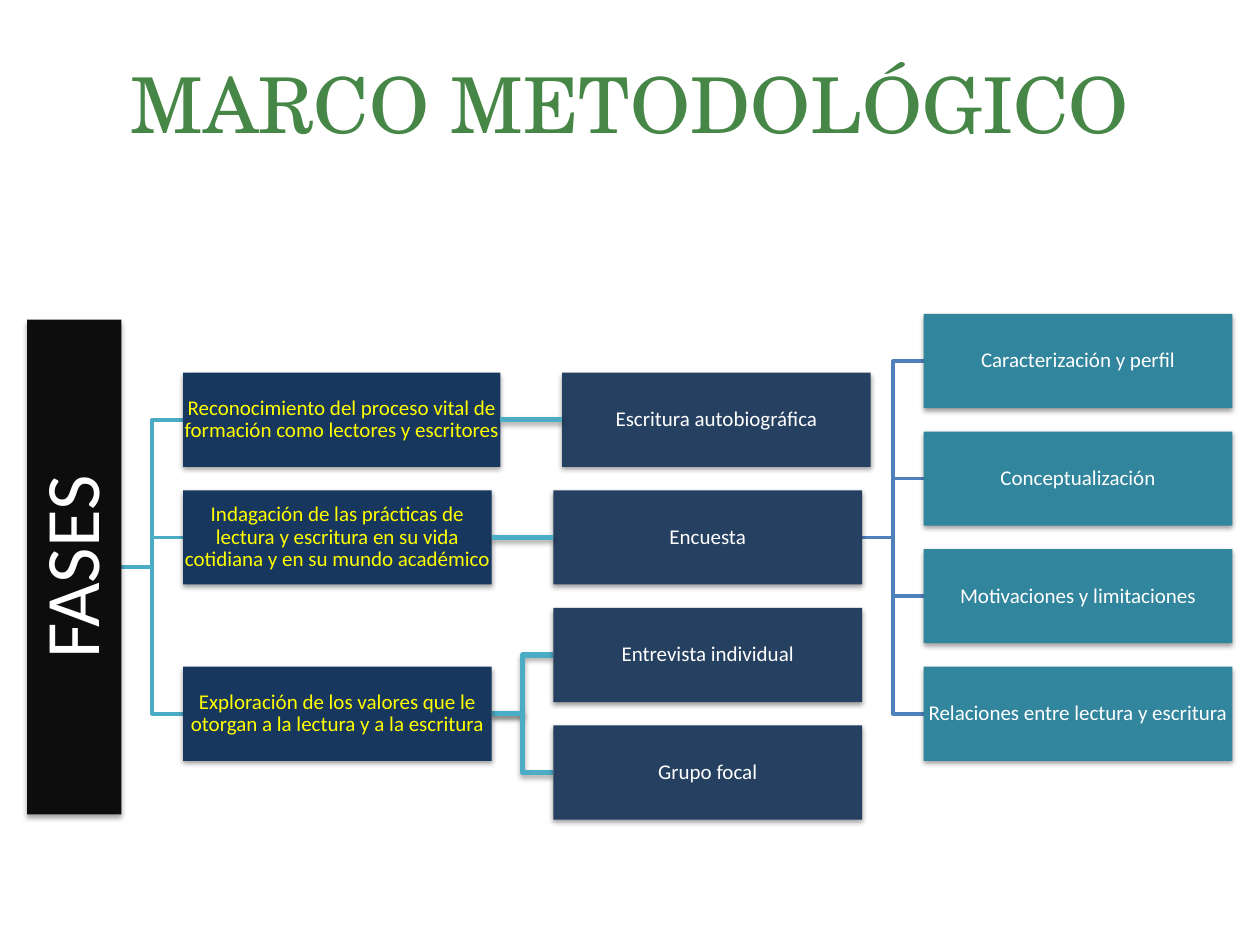
from lxml import etree
from pptx import Presentation
from pptx.dml.color import RGBColor
from pptx.enum import shapes as es, text as et
from pptx.oxml.ns import qn
from pptx.util import Pt

TITLE = "MARCO METODOLÓGICO"
ROOT = "FASES"
NAVY, SLATE, TEAL = "17375E", "254061", "31859C"
AQUA, BLUE, WHITE, YELLOW = "4BACC6", "4F81BD", "FFFFFF", "FFFF00"

# key: text, column, row, shift, extra width
BOXES = {
    "vital": ("Reconocimiento del proceso vital de formación como lectores y escritores", 0, 0.5, 0, 5),
    "habits": ("Indagación de las prácticas de lectura y escritura en su vida "
               "cotidiana y en su mundo académico", 0, 1.5, 0, 0),
    "values": ("Exploración de los valores que le otorgan a la lectura y a la escritura", 0, 3, 0, 0),
    "auto": ("Escritura autobiográfica", 1, 0.5, 5, 0),
    "survey": ("Encuesta", 1, 1.5, 0, 0),
    "talk": ("Entrevista individual", 1, 2.5, 0, 0),
    "group": ("Grupo focal", 1, 3.5, 0, 0),
    "profile": ("Caracterización y perfil", 2, 0, 0, 0),
    "concept": ("Conceptualización", 2, 1, 0, 0),
    "motive": ("Motivaciones y limitaciones", 2, 2, 0, 0),
    "relate": ("Relaciones entre lectura y escritura", 2, 3, 0, 0),
}
STYLES = [(NAVY, YELLOW), (SLATE, WHITE), (TEAL, WHITE)]
PAIRS = [("vital", "auto"), ("habits", "survey")]
FORKS = [
    ("root", ["vital", "habits", "values"], AQUA, 2, False),
    ("survey", ["profile", "concept", "motive", "relate"], BLUE, 2, False),
    ("values", ["talk", "group"], AQUA, 3, True),
]
LEFT, TOP, WIDE, HIGH = 104.6, 179.4, 176.4, 53.8
COL, ROW, GAP = 211.6, 67.2, 35.2
MID, LONG = 324, 282.8


def hue(code):
    return RGBColor.from_string(code)


def shade(props, alpha=38, dist=1.6):
    effect = props.find(qn("a:effectLst"))
    if effect is None:
        effect = etree.SubElement(props, qn("a:effectLst"))
    if alpha:
        cast = etree.SubElement(effect, qn("a:outerShdw"), blurRad=str(Pt(3.1)),
                                dist=str(Pt(dist)), dir="5400000", rotWithShape="0")
        tint = etree.SubElement(cast, qn("a:srgbClr"), val="000000")
        etree.SubElement(tint, qn("a:alpha"), val=str(alpha * 1000))


def write(shape, text, size=12, color=WHITE, font="Calibri", inset=0.75,
          anchor=et.MSO_ANCHOR.MIDDLE, space=0.9):
    frame = shape.text_frame
    frame.word_wrap = True
    frame.auto_size = et.MSO_AUTO_SIZE.NONE
    frame.vertical_anchor = anchor
    frame.margin_left = frame.margin_right = Pt(inset)
    frame.margin_top = frame.margin_bottom = Pt(inset)
    para = frame.paragraphs[0]
    para.alignment = et.PP_ALIGN.CENTER
    para.line_spacing = space
    run = para.add_run()
    run.text = text
    run.font.size = Pt(size)
    run.font.name = font
    run.font.color.rgb = hue(color)


def block(slide, x, y, w, h, fill, alpha=38, dist=1.6):
    shape = slide.shapes.add_shape(es.MSO_SHAPE.RECTANGLE, Pt(x), Pt(y), Pt(w), Pt(h))
    shape.fill.solid()
    shape.fill.fore_color.rgb = hue(fill)
    shape.line.fill.background()
    shape.shadow.inherit = False
    shade(shape._element.spPr, alpha, dist)
    return shape


def elbow(slide, start, end, color, width, soft):
    (x1, y1), (x2, y2) = start, end
    bend = (x1 + x2) / 2
    spots = [(bend, y1), (bend, y2), (x2, y2)]
    path = slide.shapes.build_freeform(Pt(x1), Pt(y1))
    path.add_line_segments([(Pt(x), Pt(y)) for x, y in spots], close=False)
    shape = path.convert_to_shape()
    shape.fill.background()
    shape.line.color.rgb = hue(color)
    shape.line.width = Pt(width)
    shape.shadow.inherit = False
    if soft:
        shade(shape._element.spPr, 35, 1.8)


def join(slide, first, last):
    line = slide.shapes.add_connector(es.MSO_CONNECTOR.STRAIGHT, 0, 0, 0, 0)
    line.begin_connect(first, 3)
    line.end_connect(last, 1)
    line.line.color.rgb = hue(AQUA)
    line.line.width = Pt(3)
    shade(line._element.spPr, 35, 1.8)


def main():
    deck = Presentation()
    deck.slide_width, deck.slide_height = Pt(720), Pt(540)
    slide = deck.slides.add_slide(deck.slide_layouts[5])

    title = slide.shapes.title
    title.left, title.top, title.width, title.height = Pt(49.7), Pt(28.8), Pt(620.6), Pt(104.4)
    write(title, TITLE, size=44, color="468646", font="TeX Gyre Schola",
          inset=3.6, anchor=et.MSO_ANCHOR.TOP, space=1)

    spots = {key: (LEFT + COL * col + shift, TOP + ROW * row, WIDE + extra)
             for key, (_, col, row, shift, extra) in BOXES.items()}
    inlets = {key: (x, y + HIGH / 2) for key, (x, y, w) in spots.items()}
    outlets = {key: (x + w, y + HIGH / 2) for key, (x, y, w) in spots.items()}
    outlets["root"] = (LEFT - GAP, MID)

    for start, ends, color, width, soft in FORKS:
        for end in ends:
            elbow(slide, outlets[start], inlets[end], color, width, soft)

    center = LEFT - GAP - HIGH / 2
    root = block(slide, center - LONG / 2, MID - HIGH / 2, LONG, HIGH, "0D0D0D", 35, 1.8)
    root.rotation = 270
    write(root, ROOT, size=44, inset=2.2)

    made = {}
    for key, (text, col, *_) in BOXES.items():
        fill, color = STYLES[col]
        x, y, w = spots[key]
        made[key] = block(slide, x, y, w, HIGH, fill)
        write(made[key], text, color=color)

    for first, last in PAIRS:
        join(slide, made[first], made[last])

    deck.save("out.pptx")


if __name__ == "__main__":
    main()
